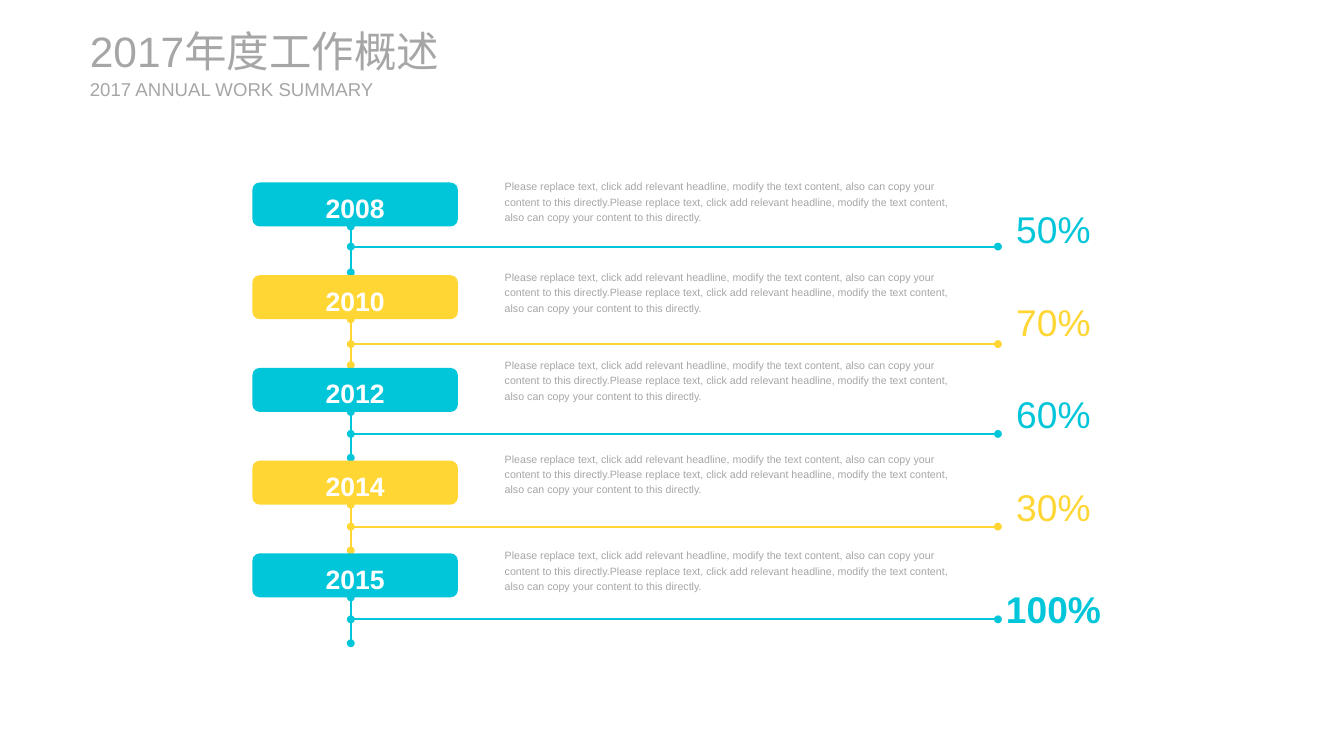
from pptx import Presentation
from pptx.dml.color import RGBColor
from pptx.enum.shapes import MSO_CONNECTOR, MSO_SHAPE
from pptx.enum.text import MSO_ANCHOR, MSO_AUTO_SIZE, PP_ALIGN
from pptx.oxml.ns import qn
from pptx.util import Inches, Pt
from lxml import etree

STRAIGHT = MSO_CONNECTOR.STRAIGHT
ROUNDED = MSO_SHAPE.ROUNDED_RECTANGLE
TOP, MIDDLE = MSO_ANCHOR.TOP, MSO_ANCHOR.MIDDLE
LEFT, CENTER = PP_ALIGN.LEFT, PP_ALIGN.CENTER
NO_AUTOFIT = MSO_AUTO_SIZE.NONE

CYAN = RGBColor(0x01, 0xC6, 0xD9)
YELLOW = RGBColor(0xFF, 0xD6, 0x33)
GRAY = RGBColor(0xA6, 0xA6, 0xA6)
WHITE = RGBColor(0xFF, 0xFF, 0xFF)

FONT = "Arial"
SENTENCE = (
    "Please replace text, click add relevant headline, modify the text content, "
    "also can copy your content to this directly."
)
DESCRIPTION = SENTENCE * 2

# Year, share, top of the description, height of the horizontal line
MILESTONES = [
    ("2008", "50%", 1.86, 2.58),
    ("2010", "70%", 2.81, 3.6),
    ("2012", "60%", 3.73, 4.54),
    ("2014", "30%", 4.71, 5.51),
    ("2015", "100%", 5.72, 6.48),
]
FIRST_TOP, PITCH = 1.91, 0.97
BOX_LEFT, BOX_WIDTH, BOX_HEIGHT = 2.64, 2.15, 0.46
STEM_X, STEM_LENGTH = 3.67, 0.48
LINE_END = 10.44
SHARE_CENTER = 11.02


def write(shape, text, *, size, color, bold=False, align=LEFT, anchor=MIDDLE,
          margin=0, wrap=True, line_spacing=1.0, space_before=0):
    """Fill a shape with one formatted paragraph."""
    frame = shape.text_frame
    frame.auto_size = NO_AUTOFIT
    frame.word_wrap = wrap
    frame.vertical_anchor = anchor
    frame.margin_left = frame.margin_right = Inches(margin)
    frame.margin_top = frame.margin_bottom = Inches(margin / 2)
    para = frame.paragraphs[0]
    para.alignment = align
    para.line_spacing = line_spacing
    para.space_before = Pt(space_before)
    span = para.add_run()
    span.text = text
    span.font.name = FONT
    span.font.size = Pt(size)
    span.font.bold = bold
    span.font.color.rgb = color


def place(shape, left, top, width, height):
    shape.left, shape.top = Inches(left), Inches(top)
    shape.width, shape.height = Inches(width), Inches(height)


def add_text(page, text, left, top, width, height, **text_format):
    box = page.shapes.add_textbox(
        Inches(left), Inches(top), Inches(width), Inches(height))
    write(box, text, **text_format)


def add_year_box(page, year, top, color):
    box = page.shapes.add_shape(
        ROUNDED, Inches(BOX_LEFT), Inches(top), Inches(BOX_WIDTH), Inches(BOX_HEIGHT))
    box.shadow.inherit = False
    box.fill.solid()
    box.fill.fore_color.rgb = color
    box.line.fill.background()
    write(box, year, size=20, color=WHITE, bold=True, align=CENTER,
          margin=0.1, line_spacing=1.2)


def add_dotted_end_line(page, start, end, color):
    """Draw a line with a round dot at both ends."""
    line = page.shapes.add_connector(
        STRAIGHT, *(Inches(value) for value in (*start, *end)))
    line.line.color.rgb = color
    line.line.width = Pt(1.5)
    properties = line.line._get_or_add_ln()
    for tag in ("a:headEnd", "a:tailEnd"):
        etree.SubElement(properties, qn(tag), type="oval")
    etree.SubElement(line._element.spPr, qn("a:effectLst"))


def add_milestone(page, index, year, share, text_top, line_y):
    color = YELLOW if index % 2 else CYAN
    top = FIRST_TOP + index * PITCH
    is_last = index == len(MILESTONES) - 1

    # Year and its stem
    add_year_box(page, year, top, color)
    stem_top = top + BOX_HEIGHT
    add_dotted_end_line(
        page, (STEM_X, stem_top), (STEM_X, stem_top + STEM_LENGTH), color)

    # Description above its line
    add_dotted_end_line(page, (LINE_END, line_y), (STEM_X, line_y), color)
    add_text(page, DESCRIPTION, 5.28, text_top, 4.88, 0.48, size=8, color=GRAY,
             anchor=TOP, line_spacing=1.2, space_before=1.6)

    # Share, stressed in the last row
    width = 0.99 if is_last else 0.76
    add_text(page, share, SHARE_CENTER - width / 2, top + 0.19, width, 0.58,
             size=28, color=color, bold=is_last, align=CENTER, wrap=False,
             line_spacing=1.4 if is_last else 1.0, space_before=5.6)


def add_heading(page):
    title, subtitle = page.placeholders
    place(title, 0.94, 0.26, 4.32, 0.54)
    write(title, "2017年度工作概述", size=32, color=GRAY)
    place(subtitle, 0.94, 0.81, 3.07, 0.24)
    write(subtitle, "2017 ANNUAL WORK SUMMARY", size=14, color=GRAY)


def main():
    deck = Presentation()
    deck.slide_width, deck.slide_height = Inches(14.06), Inches(7.91)
    page = deck.slides.add_slide(deck.slide_layouts[0])
    add_heading(page)
    for index, milestone in enumerate(MILESTONES):
        add_milestone(page, index, *milestone)
    deck.save("out.pptx")


if __name__ == "__main__":
    main()
